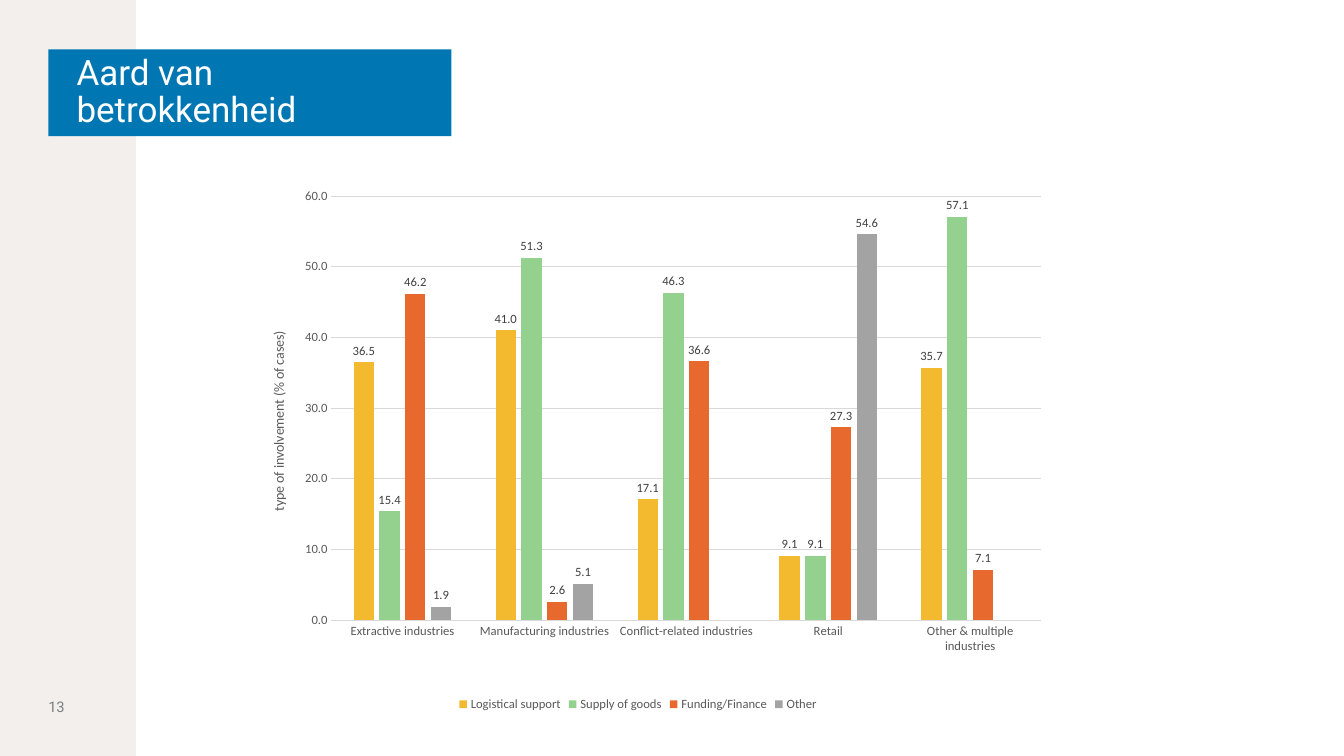
from lxml import etree
from pptx import Presentation
from pptx.chart.data import CategoryChartData
from pptx.dml.color import RGBColor
from pptx.enum.chart import XL_CHART_TYPE, XL_LABEL_POSITION, XL_LEGEND_POSITION, XL_TICK_MARK
from pptx.enum.shapes import MSO_SHAPE
from pptx.enum.text import MSO_ANCHOR, MSO_AUTO_SIZE, PP_ALIGN
from pptx.oxml.ns import qn
from pptx.util import Pt

COLUMNS = XL_CHART_TYPE.COLUMN_CLUSTERED
OUTSIDE_END = XL_LABEL_POSITION.OUTSIDE_END
BOTTOM = XL_LEGEND_POSITION.BOTTOM
NO_TICK = XL_TICK_MARK.NONE
RECTANGLE = MSO_SHAPE.RECTANGLE
MIDDLE = MSO_ANCHOR.MIDDLE
NO_FIT = MSO_AUTO_SIZE.NONE
LEFT = PP_ALIGN.LEFT

TITLE = "Aard van betrokkenheid"
PAGE_NUMBER = "13"
AXIS_TITLE = "type of involvement (% of cases)"
CATEGORIES = ["Extractive industries", "Manufacturing industries",
              "Conflict-related industries", "Retail", "Other & multiple industries"]
SERIES = [
    ("Logistical support", "yellow", [36.5, 41, 17.1, 9.1, 35.7]),
    ("Supply of goods", "green", [15.4, 51.3, 46.3, 9.1, 57.1]),
    ("Funding/Finance", "orange", [46.2, 2.6, 36.6, 27.3, 7.1]),
    ("Other", "gray", [1.9, 5.1, None, 54.6, None]),
]
COLORS = {
    "band": "F2EFED", "title": "0077B3", "white": "FFFFFF", "page": "7F7F7F",
    "axis": "595959", "label": "404040", "grid": "D9D9D9",
    "yellow": "F3BA30", "green": "94D18F", "orange": "E8692D", "gray": "A3A3A3",
}
EMU_PER_PX = 9144
SLIDE_SIZE = (1334, 750)
BAND_BOX = (0, 0, 135, 750)
TITLE_BOX = (48, 49, 400, 86)
PAGE_BOX = (48, 652, 67, 98)
CHART_BOX = (233, 184, 801, 526)
PLOT_LAYOUT = {"layoutTarget": "inner", "xMode": "edge", "yMode": "edge",
               "x": 0.12, "y": 0.02, "w": 0.88, "h": 0.8}
AXIS_TITLE_LAYOUT = {"xMode": "edge", "yMode": "edge", "x": 0.04, "y": 0.27}


def emu(*lengths):
    return [length * EMU_PER_PX for length in lengths]


def color(name):
    return RGBColor.from_string(COLORS[name])


def style_font(font, name, size, color_name):
    font.name = name
    font.size = Pt(size)
    font.bold = False
    font.color.rgb = color(color_name)


def fill_plain(shape, color_name):
    shape.fill.solid()
    shape.fill.fore_color.rgb = color(color_name)
    shape.line.fill.background()


def write_text(shape, text, size, color_name, left_margin, right_margin):
    frame = shape.text_frame
    frame.text = text
    frame.word_wrap = True
    frame.auto_size = NO_FIT
    frame.vertical_anchor = MIDDLE
    frame.margin_left, frame.margin_right = emu(left_margin, right_margin)
    frame.margin_top = frame.margin_bottom = 0
    paragraph = frame.paragraphs[0]
    paragraph.alignment = LEFT
    style_font(paragraph.runs[0].font, "Roboto", size, color_name)
    return paragraph


def set_layout(element, index, settings):
    for old_layout in element.findall(qn("c:layout")):
        element.remove(old_layout)
    layout = etree.Element(qn("c:layout"))
    manual = etree.SubElement(layout, qn("c:manualLayout"))
    for name, value in settings.items():
        etree.SubElement(manual, qn("c:" + name)).set("val", str(value))
    element.insert(index, layout)


def style_line(line, color_name):
    line.color.rgb = color(color_name)
    line.width = Pt(0.75)


def add_involvement_chart(slide):
    data = CategoryChartData(number_format="0.0")
    data.categories = CATEGORIES
    for name, _, values in SERIES:
        data.add_series(name, values)
    chart = slide.shapes.add_chart(COLUMNS, *emu(*CHART_BOX), data).chart
    style_font(chart.font, "Calibri", 10, "axis")
    chart.has_title = False
    chart.has_legend = True
    chart.legend.position = BOTTOM
    chart.legend.include_in_layout = False
    style_font(chart.legend.font, "Calibri", 9, "axis")

    for axis in (chart.category_axis, chart.value_axis):
        axis.major_tick_mark = axis.minor_tick_mark = NO_TICK
        style_font(axis.tick_labels.font, "Calibri", 9, "axis")
    style_line(chart.category_axis.format.line, "grid")
    value_axis = chart.value_axis
    value_axis.minimum_scale, value_axis.maximum_scale, value_axis.major_unit = 0, 60, 10
    value_axis.format.line.fill.background()
    style_line(value_axis.major_gridlines.format.line, "grid")
    value_axis.tick_labels.number_format = "0.0"
    value_axis.tick_labels.number_format_is_linked = False
    axis_title = value_axis.axis_title
    axis_title.text_frame.text = AXIS_TITLE
    style_font(axis_title.text_frame.paragraphs[0].runs[0].font, "Calibri", 10, "axis")
    axis_title.text_frame._txBody.bodyPr.set("rot", "-5400000")
    set_layout(axis_title._element, 1, AXIS_TITLE_LAYOUT)

    plot = chart.plots[0]
    plot.gap_width = 219
    plot.overlap = -27
    plot.vary_by_categories = False
    for series, (_, color_name, _) in zip(plot.series, SERIES):
        series.format.fill.solid()
        series.format.fill.fore_color.rgb = color(color_name)
        labels = series.data_labels
        labels.show_value = True
        labels.number_format = "0.0"
        labels.number_format_is_linked = False
        labels.position = OUTSIDE_END
        style_font(labels.font, "Calibri", 9, "label")
    set_layout(chart._chartSpace.chart.plotArea, 0, PLOT_LAYOUT)


def main():
    presentation = Presentation()
    presentation.slide_width, presentation.slide_height = emu(*SLIDE_SIZE)
    slide = presentation.slides.add_slide(presentation.slide_layouts[5])

    band = slide.shapes.add_shape(RECTANGLE, *emu(*BAND_BOX))
    band.shadow.inherit = False
    fill_plain(band, "band")
    slide.shapes._spTree.insert(2, band._element)

    title = slide.shapes.title
    title.left, title.top, title.width, title.height = emu(*TITLE_BOX)
    fill_plain(title, "title")
    write_text(title, TITLE, 25, "white", 28, 24).line_spacing = 0.9

    page_number = slide.shapes.add_textbox(*emu(*PAGE_BOX))
    write_text(page_number, PAGE_NUMBER, 10.5, "page", 0, 0)

    add_involvement_chart(slide)
    presentation.save("out.pptx")


if __name__ == "__main__":
    main()
